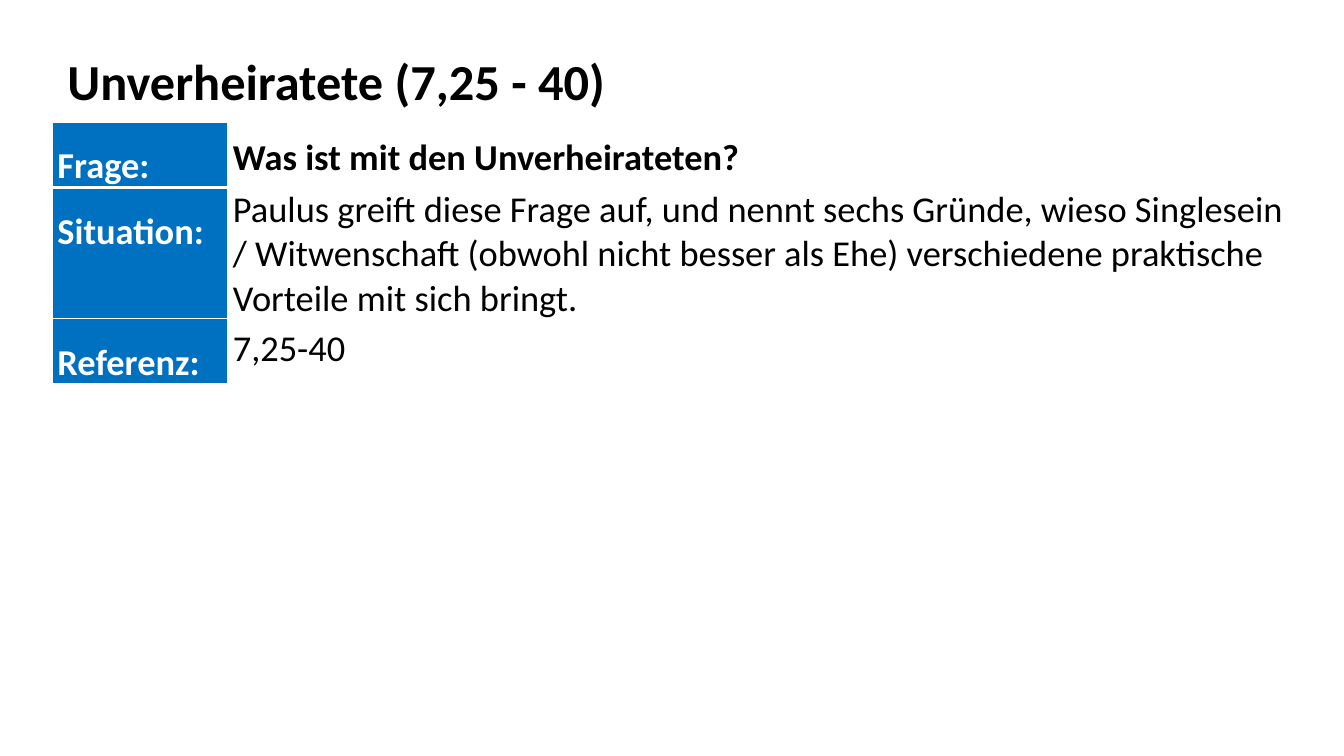
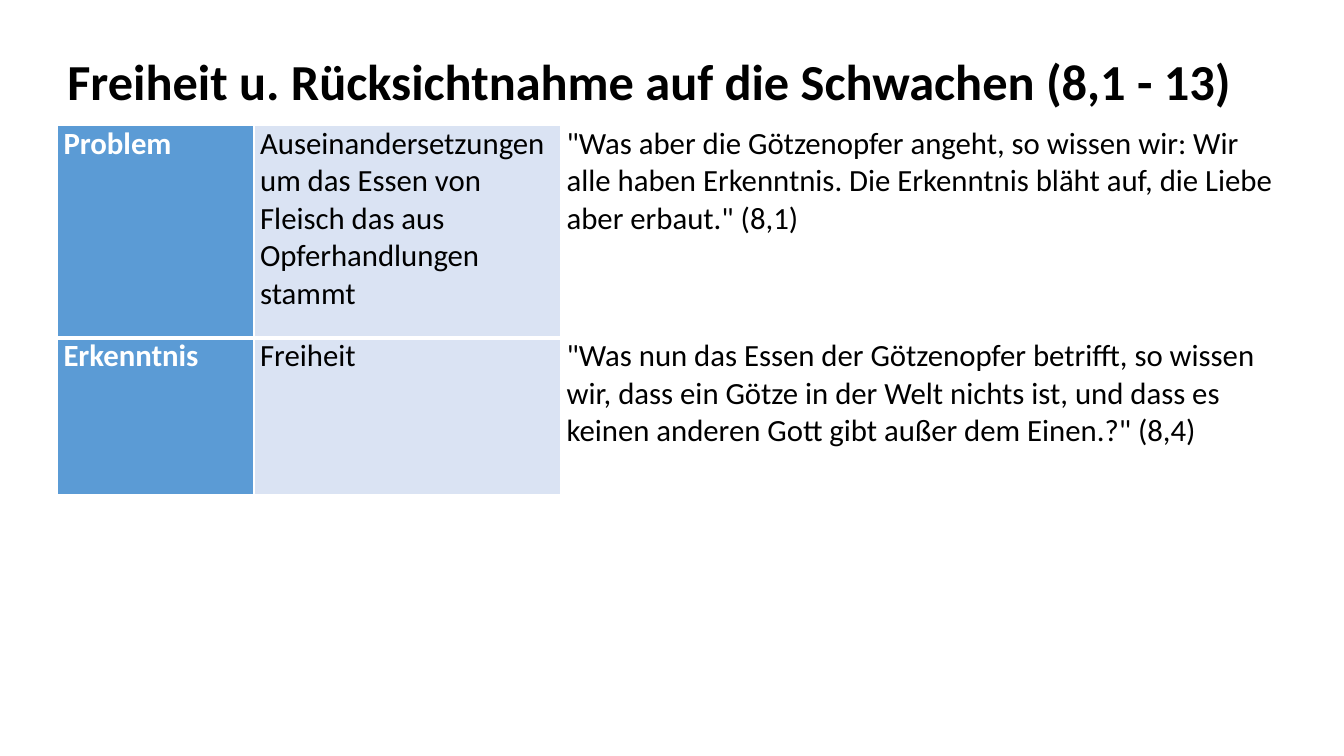
import pptx
import pptx.dml.color
import pptx.enum.text
import pptx.oxml
import pptx.oxml.ns
import pptx.util

Inches = pptx.util.Inches
Pt = pptx.util.Pt
RGB = pptx.dml.color.RGBColor

BLACK = RGB(0x00, 0x00, 0x00)
WHITE = RGB(0xFF, 0xFF, 0xFF)
BLUE = RGB(0x00, 0x70, 0xC0)
SKY = RGB(0x5B, 0x9B, 0xD5)
PALE = RGB(0xDA, 0xE3, 0xF3)
FONT = "Calibri"


def write(frame, text, size=22, color=BLACK, bold=False, space=None):
    """Put formatted text into a text frame."""
    para = frame.paragraphs[0]
    para.line_spacing = space
    run = para.add_run()
    run.text = text
    font = run.font
    font.name, font.size, font.bold = FONT, Pt(size), bold
    font.color.rgb = color


class Deck:
    """Holds the shared style and the current slide."""

    def __init__(self):
        self.prs = pptx.Presentation()
        self.prs.slide_width = Inches(13.33)
        self.prs.slide_height = Inches(7.5)
        self.slide = None

    def page(self, title, width):
        """Start a slide with its title."""
        self.slide = self.prs.slides.add_slide(self.prs.slide_layouts[6])
        box = self.slide.shapes.add_textbox(
            Inches(0.57), Inches(0.45), Inches(width), Inches(0.71))
        box.text_frame.word_wrap = False
        box.text_frame.auto_size = pptx.enum.text.MSO_AUTO_SIZE.SHAPE_TO_FIT_TEXT
        write(box.text_frame, title, size=36, bold=True)

    def border(self, cell, base):
        """Draw white cell borders, with a base line of the given width."""
        props = cell._tc.get_or_add_tcPr()
        for spot, side in enumerate("LRTB"):
            width = Pt(base if side == "B" else 1)
            props.insert(spot, pptx.oxml.parse_xml(
                f'<a:ln{side} {pptx.oxml.ns.nsdecls("a")} w="{width}">'
                f'<a:solidFill><a:srgbClr val="{WHITE}"/></a:solidFill>'
                f'</a:ln{side}>'))

    def table(self, left, top, cols, rows, fills, texts, styles, pad, drops=None):
        """Add a table; fills and styles go by column, drops add top margin."""
        drops = drops or {}
        grid = self.slide.shapes.add_table(
            len(rows), len(cols), Inches(left), Inches(top),
            Inches(sum(cols)), Inches(sum(rows))).table
        for col, width in zip(grid.columns, cols):
            col.width = Inches(width)
        for row, height in zip(grid.rows, rows):
            row.height = Inches(height)
        for r, line in enumerate(texts):
            for c, text in enumerate(line):
                cell = grid.cell(r, c)
                cell.margin_left = cell.margin_right = Inches(pad)
                cell.margin_top = Inches(drops.get((r, c), 0))
                cell.margin_bottom = 0
                cell.fill.solid()
                cell.fill.fore_color.rgb = fills[c]
                self.border(cell, base=3 if r == 0 else 1)
                style = dict(styles[c])
                if r == 0:
                    style.update(style.pop("head", {}))
                style.pop("head", None)
                write(cell.text_frame, text, **style)


def main():
    deck = Deck()

    # Unmarried people
    deck.page("Unverheiratete (7,25 - 40)", 5.59)
    deck.table(
        0.52, 1.21, cols=[1.74, 10.57], rows=[0.65, 1.3, 0.65],
        fills=[BLUE, WHITE], pad=0.05, drops={(0, 1): 0.14, (2, 1): 0.08},
        styles=[dict(size=26, color=WHITE, bold=True, space=1.5),
                dict(size=26, head=dict(bold=True))],
        texts=[
            ["Frage:", "Was ist mit den Unverheirateten?"],
            ["Situation:",
             "Paulus greift diese Frage auf, und nennt sechs Gründe, wieso "
             "Singlesein / Witwenschaft (obwohl nicht besser als Ehe) "
             "verschiedene praktische Vorteile mit sich bringt."],
            ["Referenz:", "7,25-40"],
        ])

    # Freedom and consideration
    deck.page("Freiheit u. Rücksichtnahme auf die Schwachen (8,1 - 13)", 11.87)
    deck.table(
        0.57, 1.24, cols=[1.95, 3.04, 7.23], rows=[2.11, 1.56],
        fills=[SKY, PALE, WHITE], pad=0.06,
        styles=[dict(color=WHITE, bold=True), {}, {}],
        texts=[
            ["Problem",
             "Auseinandersetzungen um das Essen von Fleisch das aus "
             "Opferhandlungen stammt",
             '"Was aber die Götzenopfer angeht, so wissen wir: Wir alle haben '
             'Erkenntnis. Die Erkenntnis bläht auf, die Liebe aber erbaut." (8,1)'],
            ["Erkenntnis", "Freiheit",
             '"Was nun das Essen der Götzenopfer betrifft, so wissen wir, dass '
             'ein Götze in der Welt nichts ist, und dass es keinen anderen Gott '
             'gibt außer dem Einen.?" (8,4)'],
        ])

    deck.prs.save("out.pptx")


if __name__ == "__main__":
    main()
